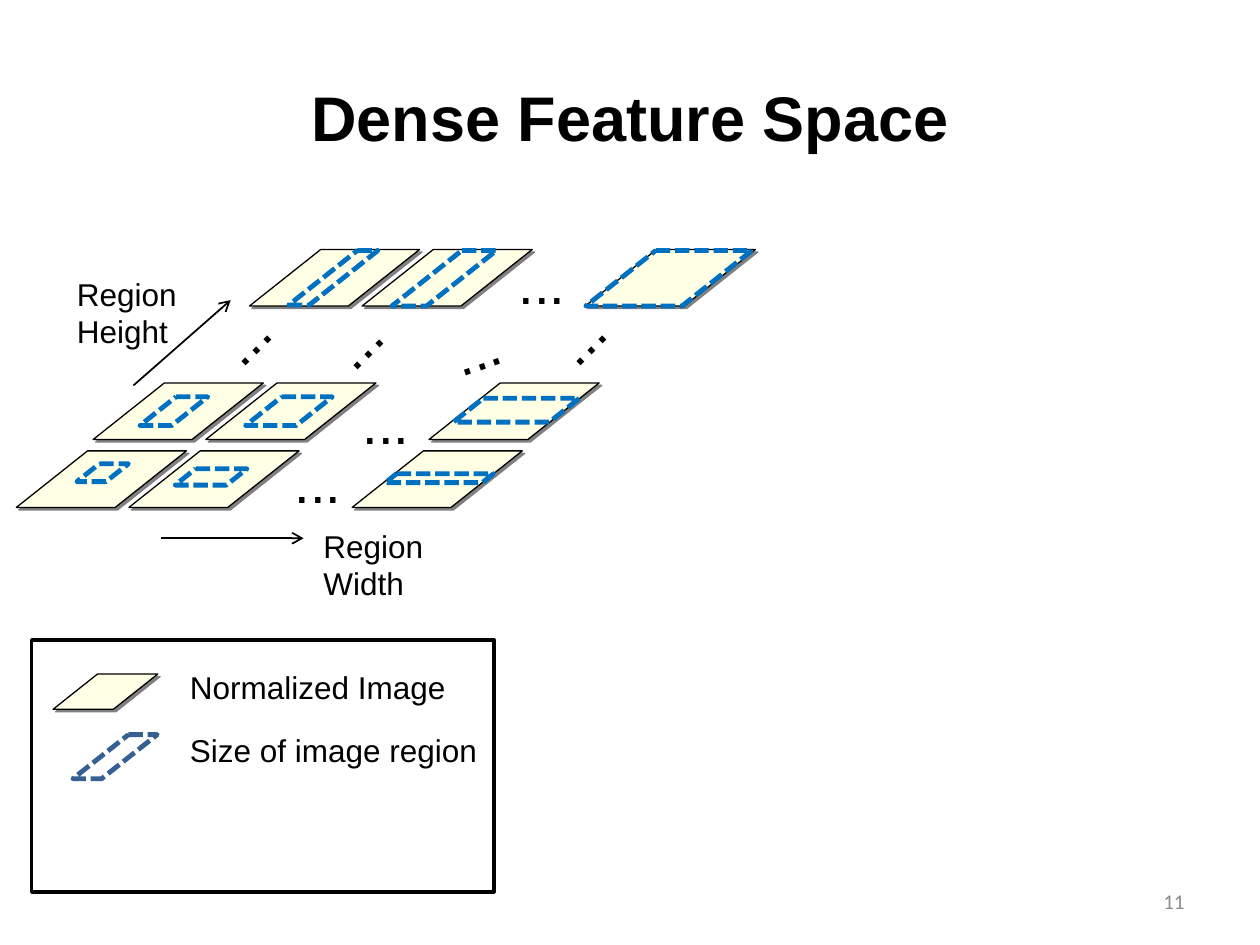
from pptx import Presentation
from pptx.dml.color import RGBColor
from pptx.enum.dml import MSO_LINE
from pptx.enum.shapes import MSO_CONNECTOR, MSO_SHAPE
from pptx.enum.text import MSO_ANCHOR, MSO_AUTO_SIZE, PP_ALIGN
from pptx.oxml import parse_xml
from pptx.oxml.ns import nsdecls, qn
from pptx.util import Cm, Pt

STRAIGHT = MSO_CONNECTOR.STRAIGHT
RECTANGLE = MSO_SHAPE.RECTANGLE
DASH = MSO_LINE.SQUARE_DOT
MIDDLE = MSO_ANCHOR.MIDDLE
LEFT, CENTER, RIGHT = PP_ALIGN.LEFT, PP_ALIGN.CENTER, PP_ALIGN.RIGHT
GROW = MSO_AUTO_SIZE.SHAPE_TO_FIT_TEXT

BLACK, CREAM, BLUE, NAVY, GRAY = "000000", "FFFFE5", "0070C0", "376092", "8C8C8C"
SLANT = 1.26  # horizontal shift of a parallelogram per unit of height

# Grid of normalized images, in cm
TILE = (3.43, 1.14)
ROWS = [(5.03, 5.03), (1.88, 7.72), (0.33, 9.09)]
COLUMNS = [0, 2.27, 6.77]

# Image regions: left, top, width, height
REGIONS = [
    (5.82, 5.05, 1.8, 1.1), (7.9, 5.05, 2.11, 1.12), (11.81, 5.05, 3.35, 1.12),
    (2.82, 8, 1.37, 0.58), (4.95, 8, 1.75, 0.58), (9.14, 8.03, 2.54, 0.48),
    (1.55, 9.35, 1.04, 0.36), (3.53, 9.45, 1.45, 0.33), (7.77, 9.55, 2.18, 0.18),
]

# Ellipses: left, top, rotation
ELLIPSES = [
    (4.09, 5.84, 315), (6.35, 5.92, 315), (10.85, 5.84, 315), (8.86, 6.15, 341.1),
    (5.69, 8.89, 0), (7.06, 7.7, 0), (10.21, 4.88, 0),
]


def color(value):
    return RGBColor.from_string(value)


def set_line(shape, line_color, width):
    shape.line.color.rgb = color(line_color)
    shape.line.width = Pt(width)


def add_parallelogram(page, left, top, width, height):
    shift = SLANT * height
    corners = [(left + shift, top), (left + width, top),
               (left + width - shift, top + height), (left, top + height)]
    points = [(Cm(x), Cm(y)) for x, y in corners]
    builder = page.shapes.build_freeform(*points[0], scale=1.0)
    builder.add_line_segments(points[1:], close=True)
    shape = builder.convert_to_shape()
    shape.shadow.inherit = False
    return shape


def add_tile(page, *place):
    tile = add_parallelogram(page, *place)
    tile.fill.solid()
    tile.fill.fore_color.rgb = color(CREAM)
    set_line(tile, BLACK, 0)
    effects = tile._element.spPr.find(qn("a:effectLst"))
    effects.append(parse_xml(
        f'<a:outerShdw {nsdecls("a")} dist="25400" dir="2700000" algn="ctr" rotWithShape="0">'
        f'<a:srgbClr val="808080"/></a:outerShdw>'))


def add_region(page, *place, line_color=BLUE):
    region = add_parallelogram(page, *place)
    region.fill.background()
    set_line(region, line_color, 2.75)
    region.line.dash_style = DASH


def add_arrow(page, *ends):
    arrow = page.shapes.add_connector(STRAIGHT, *map(Cm, ends))
    set_line(arrow, BLACK, 1)
    arrow.line._get_or_add_ln().append(
        parse_xml(f'<a:tailEnd {nsdecls("a")} type="arrow"/>'))
    arrow._element.spPr.append(parse_xml(f'<a:effectLst {nsdecls("a")}/>'))


def write(box, text, align=LEFT, font_color=BLACK, **font_format):
    para = box.text_frame.paragraphs[0]
    para.alignment = align
    span = para.add_run()
    span.text = text
    for name, value in {"name": "Arial", "size": Pt(18), **font_format}.items():
        setattr(span.font, name, value)
    span.font.color.rgb = color(font_color)


def add_text(page, text, place, wrap=True, rotation=0, frame_format=None, **text_format):
    box = page.shapes.add_textbox(*map(Cm, place))
    box.rotation = rotation
    for name, value in {"word_wrap": wrap, "auto_size": GROW, **(frame_format or {})}.items():
        setattr(box.text_frame, name, value)
    write(box, text, **text_format)


def add_title(page, text):
    title = page.shapes.title
    place = {"left": 1.27, "top": 0.76, "width": 22.86, "height": 3.18}
    for name, value in place.items():
        setattr(title, name, Cm(value))
    title.text_frame.vertical_anchor = MIDDLE
    write(title, text, CENTER, size=Pt(36), bold=True)


def add_feature_space(page):
    # Normalized images, then the regions on them
    for row_left, top in ROWS:
        for offset in COLUMNS:
            add_tile(page, row_left + offset, top, *TILE)
    for left, top, rotation in ELLIPSES:
        add_text(page, "...", (left, top, 1.9, 1.55), rotation=rotation, size=Pt(32))
    for place in REGIONS:
        add_region(page, *place)

    # Axes
    add_arrow(page, 2.69, 7.77, 4.65, 6.05)
    add_arrow(page, 3.25, 10.85, 6.12, 10.85)
    add_text(page, "Region Height", (1.3, 5.41, 3.48, 1.73))
    add_text(page, "Region Width", (6.27, 10.49, 4.29, 1.73))


def add_legend(page):
    frame = page.shapes.add_shape(RECTANGLE, Cm(0.64), Cm(12.9), Cm(9.32), Cm(5.08))
    frame.shadow.inherit = False
    frame.fill.background()
    set_line(frame, BLACK, 2)
    add_tile(page, 1.07, 13.59, 2.11, 0.71)
    add_region(page, 1.47, 14.81, 1.7, 0.89, line_color=NAVY)
    add_text(page, "Normalized Image", (3.58, 13.34, 5.72, 1.02), wrap=False)
    add_text(page, "Size of image region", (3.58, 14.61, 6.35, 1.02), wrap=False)


def main():
    deck = Presentation()
    deck.slide_width, deck.slide_height = Cm(25.4), Cm(19.05)
    page = deck.slides.add_slide(deck.slide_layouts[5])
    add_title(page, "Dense Feature Space")
    add_feature_space(page)
    add_legend(page)

    # Slide number
    add_text(page, "11", (18.21, 17.65, 5.92, 1.02), align=RIGHT, font_color=GRAY,
             frame_format={"auto_size": MSO_AUTO_SIZE.NONE, "vertical_anchor": MIDDLE},
             name="Calibri", size=Pt(12))
    deck.save("out.pptx")


if __name__ == "__main__":
    main()
